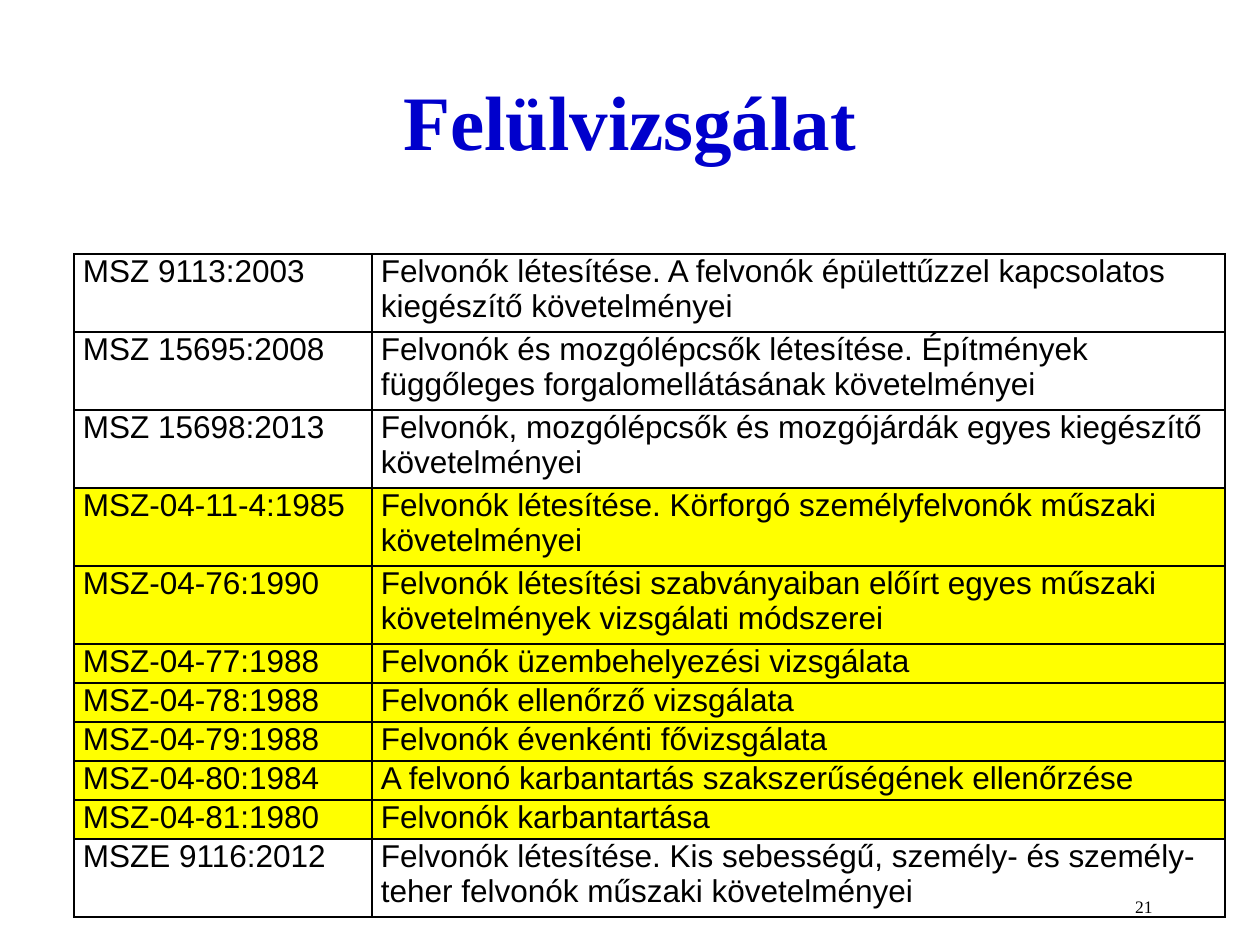
from lxml import etree
from pptx import Presentation
from pptx.dml.color import RGBColor
from pptx.enum.text import MSO_ANCHOR, PP_ALIGN
from pptx.oxml.ns import qn
from pptx.util import Emu, Pt

PX = 914400 // 126
CENTER, RIGHT = PP_ALIGN.CENTER, PP_ALIGN.RIGHT
MIDDLE, TOP = MSO_ANCHOR.MIDDLE, MSO_ANCHOR.TOP
SERIF, SANS = "Times New Roman", "Arial"
BLACK, BLUE, YELLOW = "000000", "0000CC", "FFFF00"
LINE = 39  # height of a one-line row

# code, title, lines of text, highlighted
ROWS = [
    ("MSZ 9113:2003", "Felvonók létesítése. A felvonók épülettűzzel kapcsolatos "
     "kiegészítő követelményei", 2, False),
    ("MSZ 15695:2008", "Felvonók és mozgólépcsők létesítése. Építmények "
     "függőleges forgalomellátásának követelményei", 2, False),
    ("MSZ 15698:2013", "Felvonók, mozgólépcsők és mozgójárdák egyes kiegészítő "
     "követelményei", 2, False),
    ("MSZ-04-11-4:1985", "Felvonók létesítése. Körforgó személyfelvonók műszaki "
     "követelményei", 2, True),
    ("MSZ-04-76:1990", "Felvonók létesítési szabványaiban előírt egyes műszaki "
     "követelmények vizsgálati módszerei", 2, True),
    ("MSZ-04-77:1988", "Felvonók üzembehelyezési vizsgálata", 1, True),
    ("MSZ-04-78:1988", "Felvonók ellenőrző vizsgálata", 1, True),
    ("MSZ-04-79:1988", "Felvonók évenkénti fővizsgálata", 1, True),
    ("MSZ-04-80:1984", "A felvonó karbantartás szakszerűségének ellenőrzése", 1, True),
    ("MSZ-04-81:1980", "Felvonók karbantartása", 1, True),
    ("MSZE 9116:2012", "Felvonók létesítése. Kis sebességű, személy- és "
     "személy-teher felvonók műszaki követelményei", 2, False),
]


def px(*vals):
    return [Emu(v * PX) for v in vals]


def rgb(code):
    return RGBColor.from_string(code)


def write(frame, text, face, size, color=BLACK, align=None, bold=False):
    frame.text = text
    frame.word_wrap = True
    para = frame.paragraphs[0]
    para.alignment = align
    font = para.runs[0].font
    font.name, font.size, font.bold = face, Pt(size), bold
    font.color.rgb = rgb(color)


def add_title(slide, text):
    box = slide.shapes.title
    box.left, box.top, box.width, box.height = px(94, 55, 1072, 129)
    write(box.text_frame, text, SERIF, 44, BLUE, CENTER, True)
    box.text_frame.vertical_anchor = MIDDLE


def add_number(slide, text):
    box = slide.shapes.add_textbox(*px(903, 890, 262, 35))
    write(box.text_frame, text, SERIF, 10, align=RIGHT)


def add_edges(cell):
    """Put a thin black line on every side; lines must precede the fill."""
    props = cell._tc.get_or_add_tcPr()
    for at, side in enumerate(("lnL", "lnR", "lnT", "lnB")):
        line = etree.Element(qn("a:" + side), w=str(Pt(1)))
        fill = etree.SubElement(line, qn("a:solidFill"))
        etree.SubElement(fill, qn("a:srgbClr"), val=BLACK)
        props.insert(at, line)


def style_cell(cell, text, marked):
    write(cell.text_frame, text, SANS, 18)
    cell.vertical_anchor = TOP
    cell.margin_left, cell.margin_right = px(9, 9)
    cell.margin_top = cell.margin_bottom = 0
    if marked:
        cell.fill.solid()
        cell.fill.fore_color.rgb = rgb(YELLOW)
    else:
        cell.fill.background()
    add_edges(cell)


def add_list(slide, rows):
    high = LINE * sum(row[2] for row in rows)
    grid = slide.shapes.add_table(len(rows), 2, *px(74, 254, 1151, high)).table
    grid.first_row = grid.horz_banding = False
    for col, wide in zip(grid.columns, px(298, 853)):
        col.width = wide
    for i, (code, name, lines, marked) in enumerate(rows):
        grid.rows[i].height = px(LINE * lines)[0]
        for j, text in enumerate((code, name)):
            style_cell(grid.cell(i, j), text, marked)


def main():
    deck = Presentation()
    deck.slide_width, deck.slide_height = px(1260, 945)
    slide = deck.slides.add_slide(deck.slide_layouts[5])
    add_title(slide, "Felülvizsgálat")
    add_number(slide, "21")
    add_list(slide, ROWS)
    deck.save("out.pptx")


if __name__ == "__main__":
    main()
